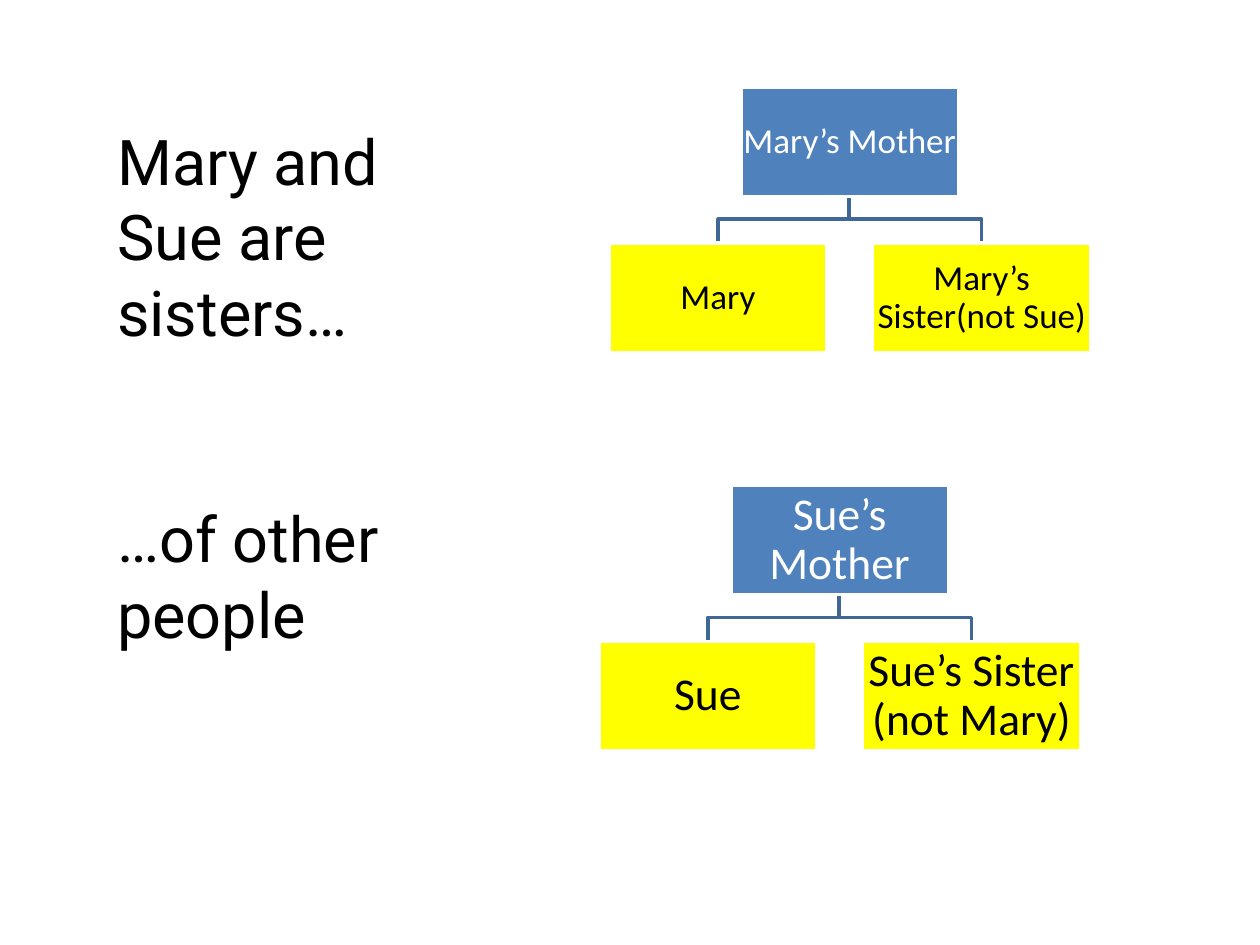
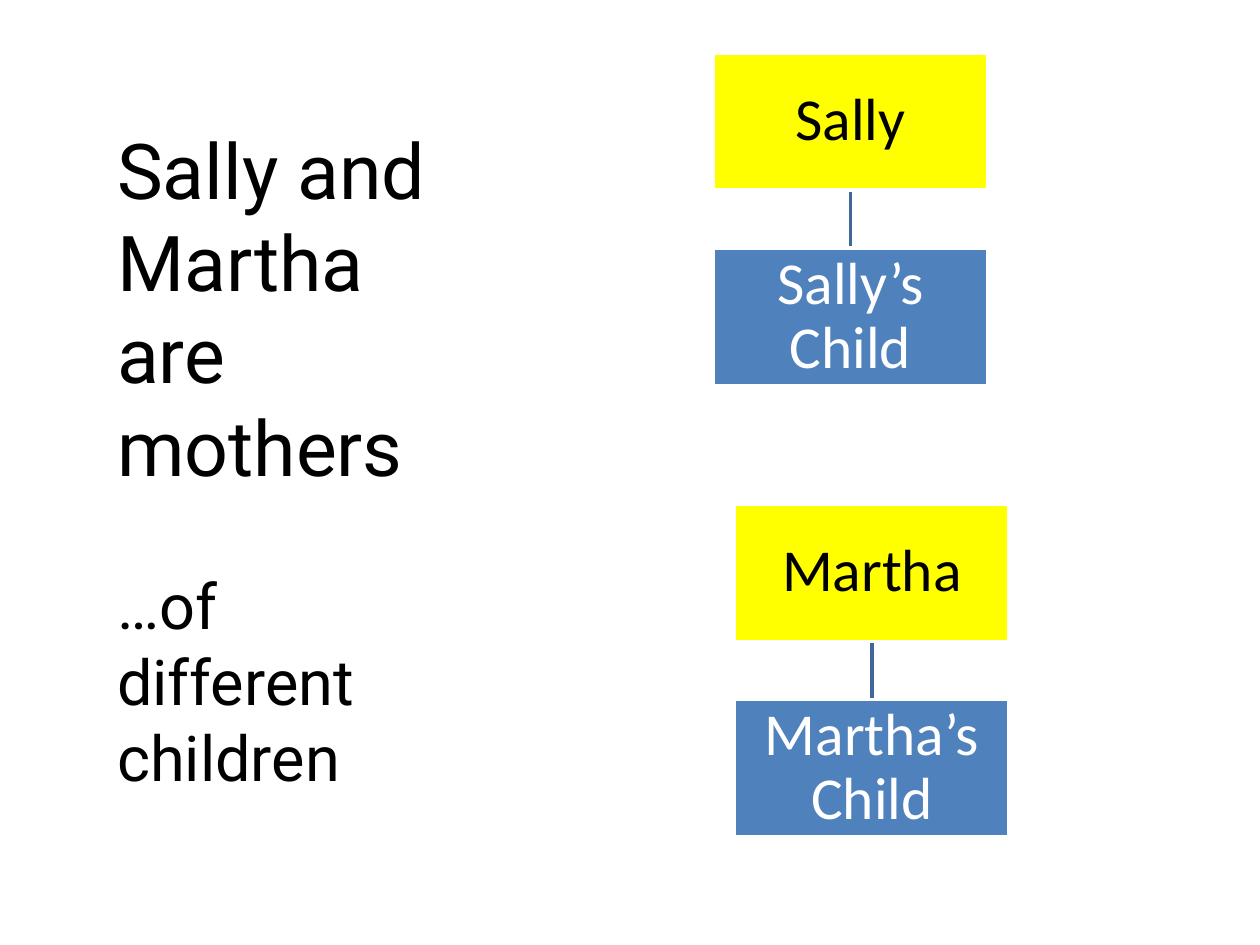
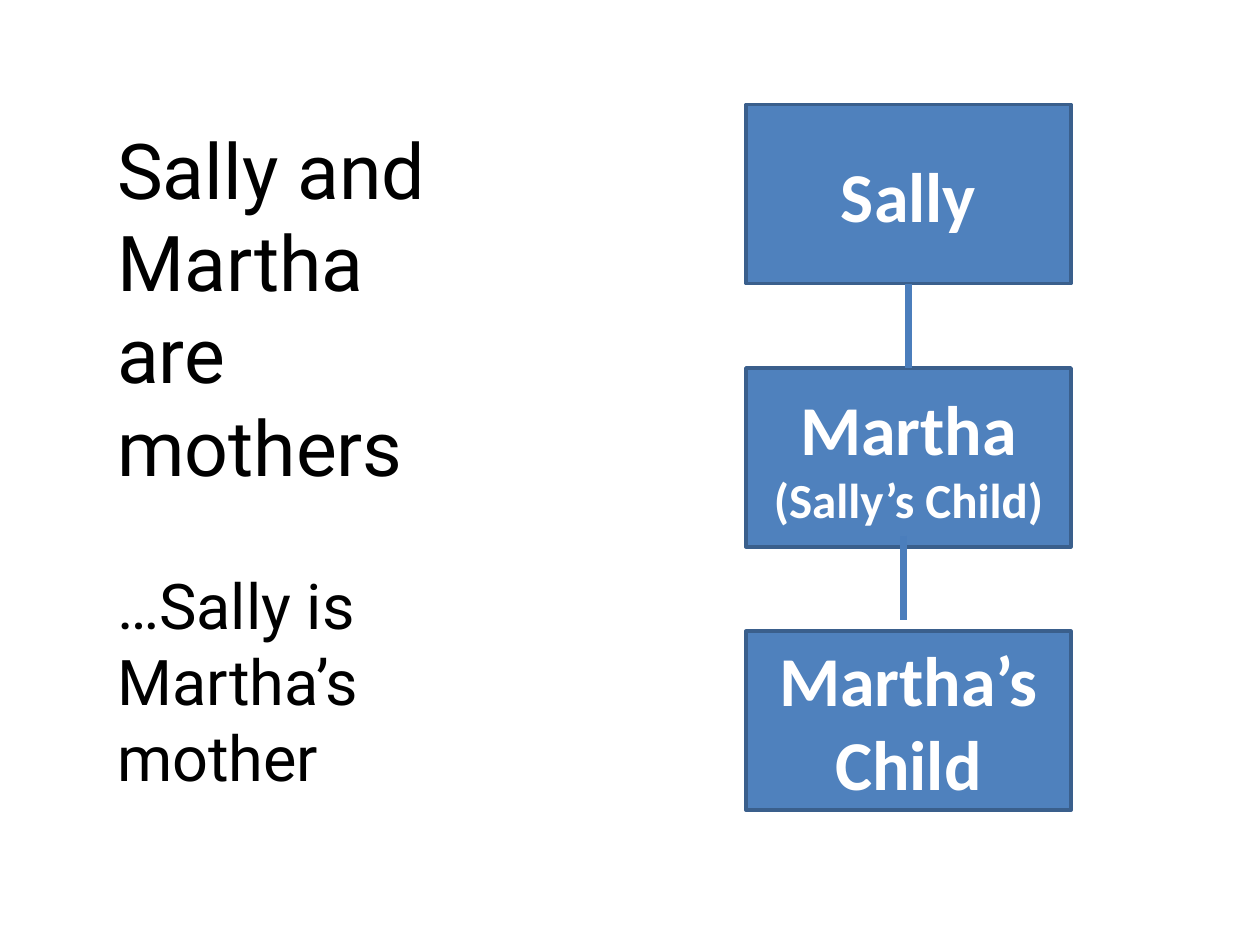
from dataclasses import dataclass

from lxml.etree import SubElement
from pptx import Presentation
from pptx.dml.color import RGBColor
from pptx.enum.shapes import MSO_CONNECTOR as Connector, MSO_SHAPE as Shape
from pptx.enum.text import MSO_ANCHOR as Anchor, MSO_AUTO_SIZE as AutoSize, PP_ALIGN as Align
from pptx.oxml.ns import qn
from pptx.util import Pt

SCALE = 9144
TITLE_ONLY = 5


@dataclass(frozen=True)
class Theme:
    """Colours, fonts and type sizes shared by the slides."""

    black: str = "000000"
    white: str = "FFFFFF"
    blue: str = "4F81BD"
    yellow: str = "FFFF00"
    branch: str = "3F6797"
    border: str = "3A5F8C"
    link: str = "4B7EBC"
    statement_font: str = "Roboto"
    box_font: str = "Calibri"
    statement_size: int = 36
    large_statement_size: int = 44
    chain_size: int = 40
    note_size: int = 28
    statement_line: int = 43
    thin: float = 2
    thick: float = 3.75


THEME = Theme()


@dataclass(frozen=True)
class BoxStyle:
    """Size and type of the boxes in one diagram."""

    width: int
    height: int
    size: int
    inset: tuple = (2, 2)
    border: str = THEME.white
    bold: bool = False
    line_spacing: float = 0.9


SMALL_TYPE = BoxStyle(173, 87, 20, inset=(1, 1))
MEDIUM_TYPE = BoxStyle(173, 87, 26)
PAIR = BoxStyle(218, 109, 34)
CHAIN = BoxStyle(258, 142, THEME.chain_size, (10, 5), THEME.border, True, 1.0)


def px(length):
    """Turn px into EMU."""
    return round(length * SCALE)


def apply_format(target, values):
    """Set every attribute named in a dict of format values."""
    for name, value in values.items():
        setattr(target, name, value)


def add_run(paragraph, text, font, size, color, bold=False):
    """Add one formatted run."""
    run = paragraph.add_run()
    run.text = text
    apply_format(run.font, {"name": font, "size": Pt(size), "bold": bold})
    run.font.color.rgb = RGBColor.from_string(color)


def set_line(line, color, width):
    """Give a line its colour and width."""
    line.color.rgb = RGBColor.from_string(color)
    line.width = Pt(width)


def add_statement(slide, claim, claim_size, twist, gap_lines, height):
    """Write the claim and its twist in the title placeholder."""
    title = slide.shapes.title
    apply_format(title, {"left": px(83), "top": px(92), "width": px(292), "height": px(height)})
    frame = title.text_frame
    apply_format(frame, {"word_wrap": True, "auto_size": AutoSize.NONE, "vertical_anchor": Anchor.TOP})
    parts = (
        (frame.paragraphs[0], claim, claim_size, 0),
        (frame.add_paragraph(), twist, THEME.statement_size, gap_lines * THEME.statement_line),
    )
    for paragraph, text, size, space in parts:
        apply_format(paragraph, {"alignment": Align.LEFT, "space_before": Pt(space)})
        add_run(paragraph, text, THEME.statement_font, size, THEME.black)


def add_box(slide, left, top, text, fill, style, note=""):
    """Add a person's box, with an optional smaller note."""
    box = slide.shapes.add_shape(Shape.RECTANGLE, px(left), px(top), px(style.width), px(style.height))
    box.shadow.inherit = False
    box.fill.solid()
    box.fill.fore_color.rgb = RGBColor.from_string(fill)
    set_line(box.line, style.border, THEME.thin)
    side, edge = map(px, style.inset)
    frame = box.text_frame
    apply_format(frame, {
        "word_wrap": True, "vertical_anchor": Anchor.MIDDLE,
        "margin_left": side, "margin_right": side, "margin_top": edge, "margin_bottom": edge,
    })
    paragraph = frame.paragraphs[0]
    apply_format(paragraph, {"alignment": Align.CENTER, "line_spacing": style.line_spacing})
    color = THEME.black if fill == THEME.yellow else THEME.white
    add_run(paragraph, text, THEME.box_font, style.size, color, style.bold)
    if note:
        add_run(paragraph, note, THEME.box_font, THEME.note_size, color, style.bold)


def add_link(slide, x, top, bottom, color, width):
    """Add a vertical line between two boxes."""
    link = slide.shapes.add_connector(Connector.STRAIGHT, px(x), px(top), px(x), px(bottom))
    set_line(link.line, color, width)
    SubElement(link._element.spPr, qn("a:effectLst"))


def add_elbow(slide, start_x, end_x, top, bottom):
    """Add a branch that steps sideways halfway down."""
    middle = (top + bottom) / 2
    builder = slide.shapes.build_freeform(start_x, top, scale=SCALE)
    builder.add_line_segments([(start_x, middle), (end_x, middle), (end_x, bottom)], close=False)
    elbow = builder.convert_to_shape()
    elbow.shadow.inherit = False
    elbow.fill.background()
    set_line(elbow.line, THEME.branch, THEME.thin)


def add_family(slide, left, top, parent, children, fills, style):
    """Add a parent box with its children spread evenly below."""
    center = left + style.width / 2
    bottom = top + style.height
    child_top = round(bottom + 0.42 * style.height)
    pitch = 1.21 * style.width
    offsets = [(index - (len(children) - 1) / 2) * pitch for index in range(len(children))]
    for offset in offsets:
        if offset:
            add_elbow(slide, center, center + offset, bottom, child_top)
        else:
            add_link(slide, center, bottom, child_top, THEME.branch, THEME.thin)
    parent_fill, child_fill = fills
    add_box(slide, left, top, parent, parent_fill, style)
    for child, offset in zip(children, offsets):
        add_box(slide, left + offset, child_top, child, child_fill, style)


def add_chain(slide, left, top, pitch, people):
    """Add a column of generations joined by thick lines."""
    for index, (name, note) in enumerate(people):
        add_box(slide, left, top + index * pitch, name, THEME.blue, CHAIN, note)
    for x, start in ((721, 225), (717, 425)):
        add_link(slide, x, start, start + 67, THEME.link, THEME.thick)


def main():
    """Build the three slides."""
    presentation = Presentation()
    apply_format(presentation, {"slide_width": px(1000), "slide_height": px(750)})
    layout = presentation.slide_layouts[TITLE_ONLY]
    sisters, mothers, generations = (presentation.slides.add_slide(layout) for _ in range(3))

    add_statement(sisters, "Mary and Sue are sisters…", THEME.statement_size, "…of other people", 2, 434)
    mother_first = (THEME.blue, THEME.yellow)
    add_family(sisters, 588, 69, "Mary’s Mother", ["Mary", "Mary’s Sister(not Sue)"], mother_first, SMALL_TYPE)
    add_family(sisters, 580, 385, "Sue’s Mother", ["Sue", "Sue’s Sister (not Mary)"], mother_first, MEDIUM_TYPE)

    claim = "Sally and Martha are mothers"
    for slide, twist in ((mothers, "…of different children"), (generations, "…Sally is Martha’s mother")):
        add_statement(slide, claim, THEME.large_statement_size, twist, 1, 549)

    for left, top, name in ((566, 42, "Sally"), (583, 400, "Martha")):
        add_family(mothers, left, top, name, [f"{name}’s Child"], (THEME.yellow, THEME.blue), PAIR)

    people = (("Sally", ""), ("Martha ", "(Sally’s Child)"), ("Martha’s Child", ""))
    add_chain(generations, 592, 83, 209, people)

    presentation.save("out.pptx")


if __name__ == "__main__":
    main()
